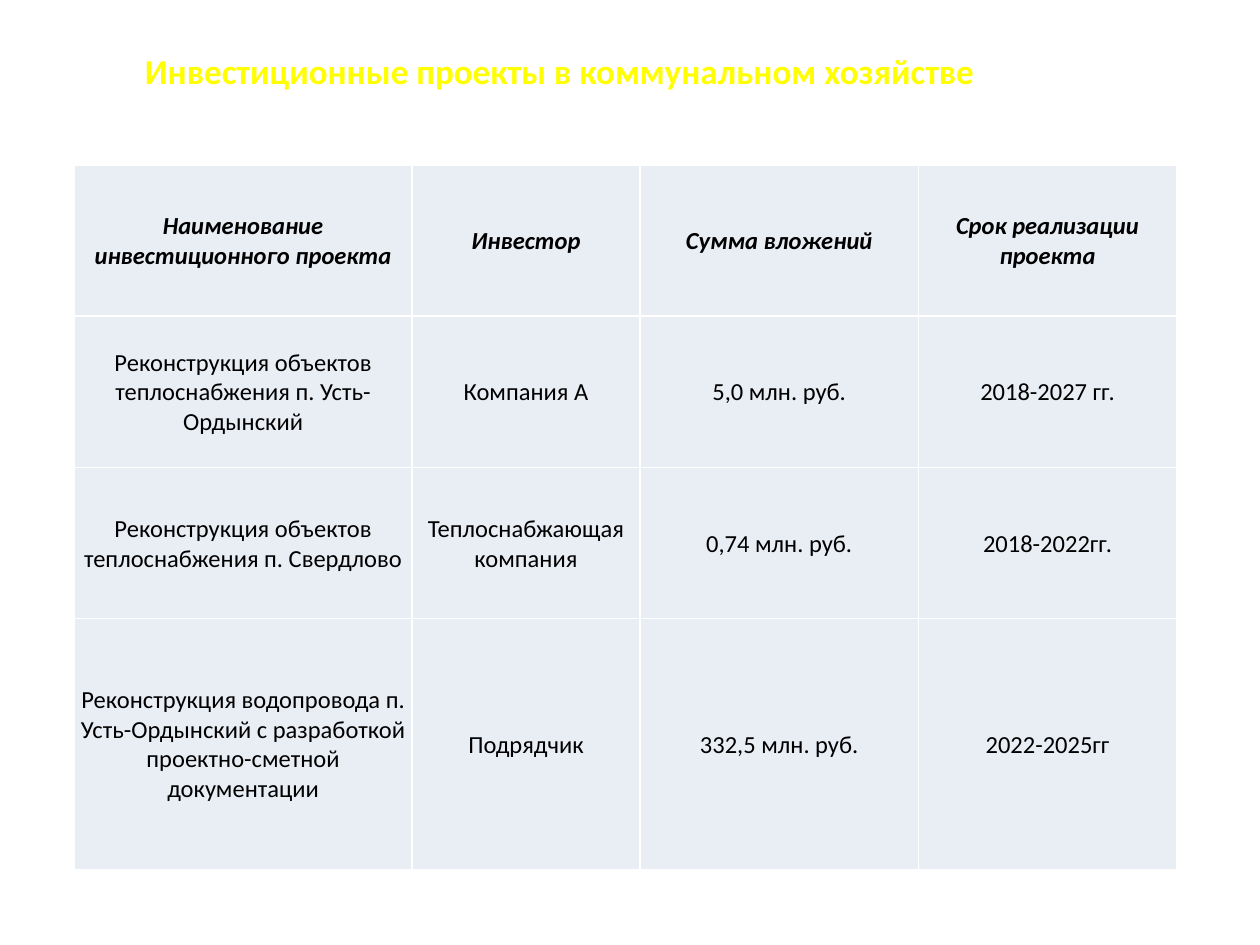
from lxml.etree import SubElement
from pptx import Presentation
from pptx.dml.color import RGBColor
from pptx.enum.text import MSO_ANCHOR, PP_ALIGN
from pptx.oxml.ns import qn
from pptx.util import Inches, Pt

TITLE = "Инвестиционные проекты в коммунальном хозяйстве"
ROWS = [
    ("Наименование инвестиционного проекта", "Инвестор", "Сумма вложений", "Срок реализации проекта"),
    ("Реконструкция объектов теплоснабжения п. Усть-Ордынский", "Компания А", "5,0 млн. руб.", "2018-2027 гг."),
    ("Реконструкция объектов теплоснабжения п. Свердлово", "Теплоснабжающая компания", "0,74 млн. руб.", "2018-2022гг."),
    ("Реконструкция водопровода п. Усть-Ордынский с разработкой проектно-сметной документации",
     "Подрядчик", "332,5 млн. руб.", "2022-2025гг"),
]
WIDTHS = [2.68, 1.81, 2.21, 2.05]
HEIGHTS = [1.2, 1.2, 1.2, 1.99]


def style(para, size, color, align, bold=False, italic=False):
    """Set the look of one paragraph."""
    para.alignment = align
    font = para.font
    font.name, font.size = "Calibri", Pt(size)
    font.bold, font.italic = bold, italic
    font.color.rgb = RGBColor.from_string(color)


def border(cell, color, width):
    """Draw a solid line on all four sides of a cell."""
    props = cell._tc.get_or_add_tcPr()
    for spot, side in enumerate(("lnL", "lnR", "lnT", "lnB")):
        line = SubElement(props, qn(f"a:{side}"), w=str(Pt(width)))
        fill = SubElement(line, qn("a:solidFill"))
        SubElement(fill, qn("a:srgbClr"), val=color)
        props.insert(spot, line)


def add_title(slide):
    """Place the slide title."""
    box = slide.shapes.add_textbox(Inches(0.75), Inches(0.29), Inches(8.35), Inches(0.51))
    frame = box.text_frame
    frame.word_wrap = True
    frame.margin_left, frame.margin_top = Inches(0.4), Inches(0.1)
    para = frame.paragraphs[0]
    para.text = TITLE
    style(para, 20, "FFFF00", PP_ALIGN.JUSTIFY, bold=True)


def add_grid(slide):
    """Place the table of projects."""
    table = slide.shapes.add_table(
        len(ROWS), len(WIDTHS), Inches(0.59), Inches(1.31),
        Inches(sum(WIDTHS)), Inches(sum(HEIGHTS))).table
    table.first_row = table.horz_banding = False
    for col, width in zip(table.columns, WIDTHS):
        col.width = Inches(width)
    for r, (texts, height) in enumerate(zip(ROWS, HEIGHTS)):
        table.rows[r].height = Inches(height)
        for c, text in enumerate(texts):
            cell = table.cell(r, c)
            cell.text = text
            cell.vertical_anchor = MSO_ANCHOR.MIDDLE
            cell.margin_left = cell.margin_right = cell.margin_top = Inches(0.01)
            cell.margin_bottom = 0
            cell.fill.solid()
            cell.fill.fore_color.rgb = RGBColor.from_string("E9EDF4")
            border(cell, "FFFFFF", 1)
            head = r == 0
            style(cell.text_frame.paragraphs[0], 14, "000000", PP_ALIGN.CENTER, head, head)


def main():
    """Build and save the slide."""
    deck = Presentation()
    deck.slide_width, deck.slide_height = Inches(10), Inches(7.5)
    slide = deck.slides.add_slide(deck.slide_layouts[6])
    add_title(slide)
    add_grid(slide)
    deck.save("out.pptx")


if __name__ == "__main__":
    main()
